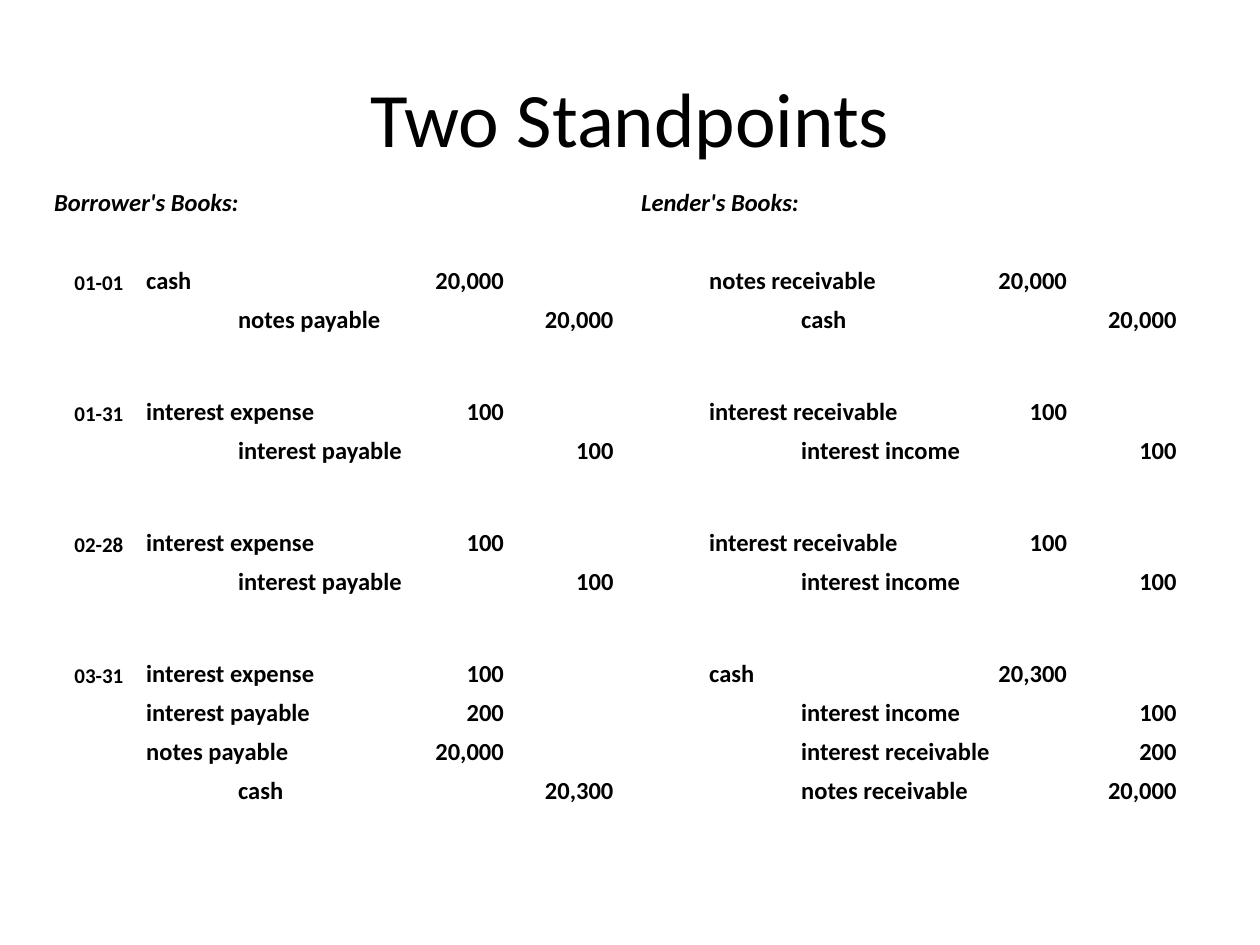
"""Build a slide comparing the borrower's and the lender's journal entries."""
from dataclasses import dataclass

from pptx import Presentation
from pptx.dml.color import RGBColor
from pptx.enum.text import MSO_ANCHOR, PP_ALIGN
from pptx.util import Inches, Pt


@dataclass(frozen=True)
class Theme:
    font: str = "Calibri"
    ink: RGBColor = RGBColor(0, 0, 0)
    title_size: Pt = Pt(44)
    entry_size: Pt = Pt(14)
    date_size: Pt = Pt(12)


theme = Theme()


def style_paragraph(paragraph, size, alignment, bold=False, italic=False):
    paragraph.alignment = alignment
    paragraph.font.name = theme.font
    paragraph.font.size = size
    paragraph.font.bold = bold
    paragraph.font.italic = italic
    paragraph.font.color.rgb = theme.ink


def write_cell(row, column, text, span=1, size=theme.entry_size,
               alignment=PP_ALIGN.LEFT, italic=False):
    cell = table.cell(row, column)
    if span > 1:
        cell.merge(table.cell(row, column + span - 1))
    if alignment == PP_ALIGN.RIGHT:
        cell.margin_right = Inches(0.21)
    paragraph = cell.text_frame.paragraphs[0]
    paragraph.text = text
    style_paragraph(paragraph, size, alignment, bold=True, italic=italic)


column_widths = [0.73] * 4 + [0.87] * 2 + [0.54] + [0.73] * 3 + [0.87] * 2
block_gap = 0.42
row_heights = [0.31] * 4 + [block_gap, 0.31, 0.31] * 2 + [block_gap] + [0.31] * 4 + [0.6]
label_spans = {"cash": 1, "notes payable": 2}
dates = {2: "01-01", 5: "01-31", 8: "02-28", 11: "03-31"}
books = [
    ("Borrower's Books:", 0, 1, [
        (2, "debit", "cash", "20,000"),
        (3, "credit", "notes payable", "20,000"),
        (5, "debit", "interest expense", "100"),
        (6, "credit", "interest payable", "100"),
        (8, "debit", "interest expense", "100"),
        (9, "credit", "interest payable", "100"),
        (11, "debit", "interest expense", "100"),
        (12, "debit", "interest payable", "200"),
        (13, "debit", "notes payable", "20,000"),
        (14, "credit", "cash", "20,300"),
    ]),
    ("Lender's Books:", 6, 7, [
        (2, "debit", "notes receivable", "20,000"),
        (3, "credit", "cash", "20,000"),
        (5, "debit", "interest receivable", "100"),
        (6, "credit", "interest income", "100"),
        (8, "debit", "interest receivable", "100"),
        (9, "credit", "interest income", "100"),
        (11, "debit", "cash", "20,300"),
        (12, "credit", "interest income", "100"),
        (13, "credit", "interest receivable", "200"),
        (14, "credit", "notes receivable", "20,000"),
    ]),
]

presentation = Presentation()
presentation.slide_width = Inches(10)
presentation.slide_height = Inches(7.5)
slide = presentation.slides.add_slide(presentation.slide_layouts[5])

title = slide.shapes.title
title.left, title.top = Inches(0.5), Inches(0.3)
title.width, title.height = Inches(9), Inches(1.25)
title.text_frame.text = "Two Standpoints"
title.text_frame.vertical_anchor = MSO_ANCHOR.MIDDLE
style_paragraph(title.text_frame.paragraphs[0], theme.title_size, PP_ALIGN.CENTER)

table = slide.shapes.add_table(
    len(row_heights), len(column_widths), Inches(0.42), Inches(1.42),
    Inches(sum(column_widths)), Inches(sum(row_heights))).table
table.first_row = False
table.horz_banding = False
for column, width in zip(table.columns, column_widths):
    column.width = Inches(width)
for row, height in zip(table.rows, row_heights):
    row.height = Inches(height)
for cell in table.iter_cells():
    cell.fill.background()
    cell.vertical_anchor = MSO_ANCHOR.BOTTOM
    cell.margin_left = cell.margin_right = Inches(0.01)
    cell.margin_top = cell.margin_bottom = 0
    cell.text_frame.paragraphs[0].font.size = theme.entry_size

for row, date in dates.items():
    write_cell(row, 0, date, size=theme.date_size, alignment=PP_ALIGN.CENTER)
for heading, heading_column, first_column, entries in books:
    write_cell(0, heading_column, heading, span=3, italic=True)
    for row, side, account, amount in entries:
        label_column = first_column + (side == "credit")
        write_cell(row, label_column, account, span=label_spans.get(account, 3))
        write_cell(row, label_column + 3, amount, alignment=PP_ALIGN.RIGHT)

presentation.save("out.pptx")
